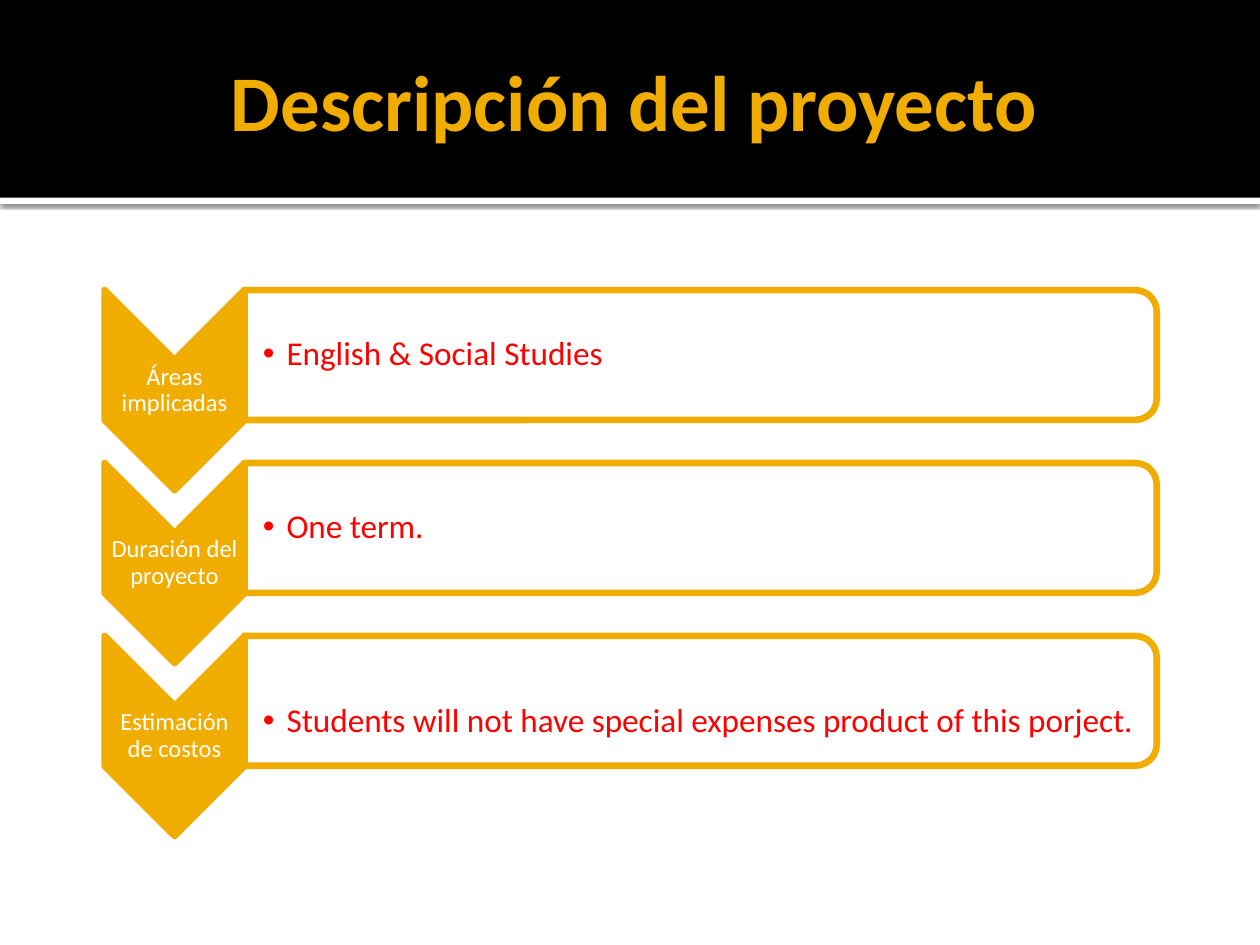
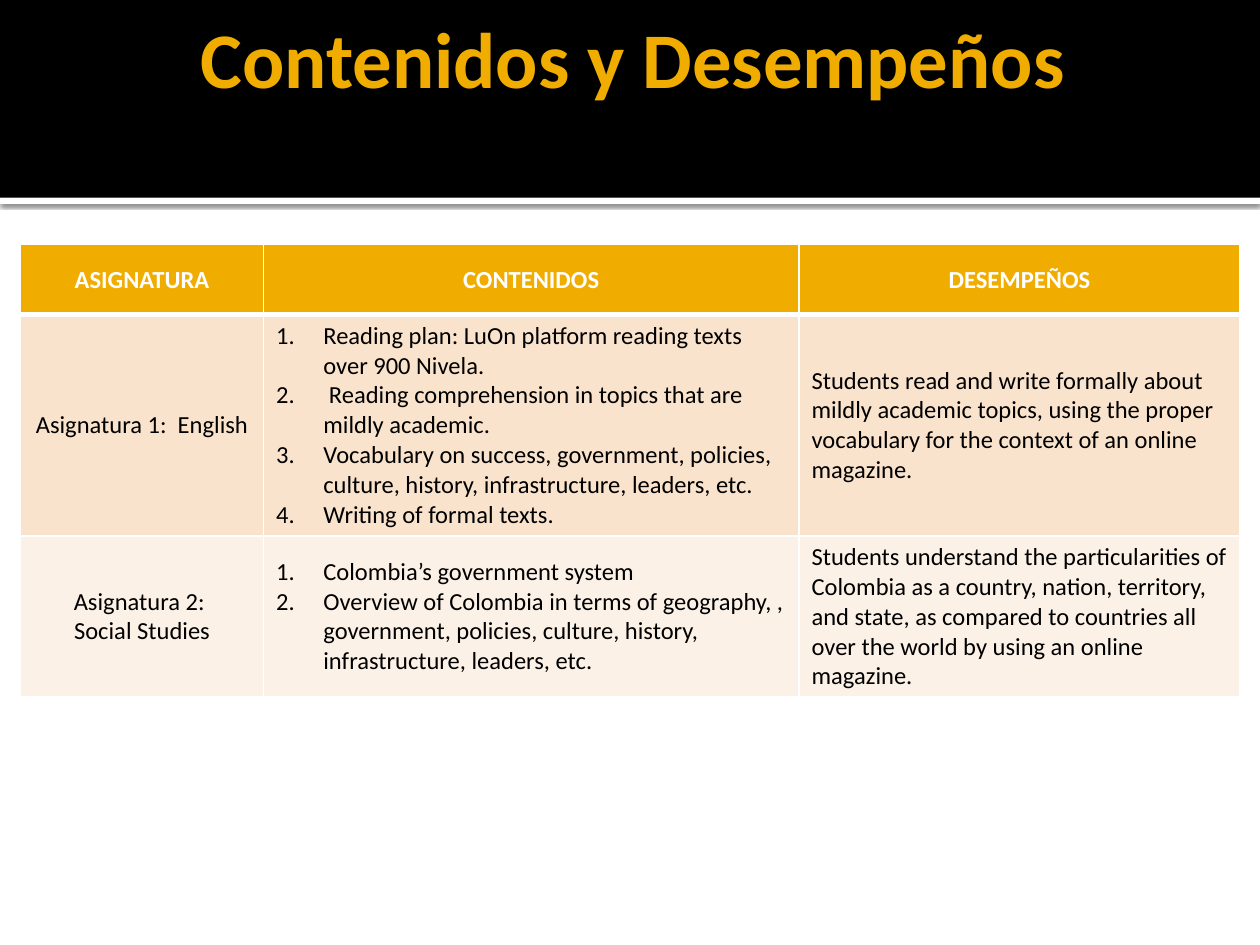
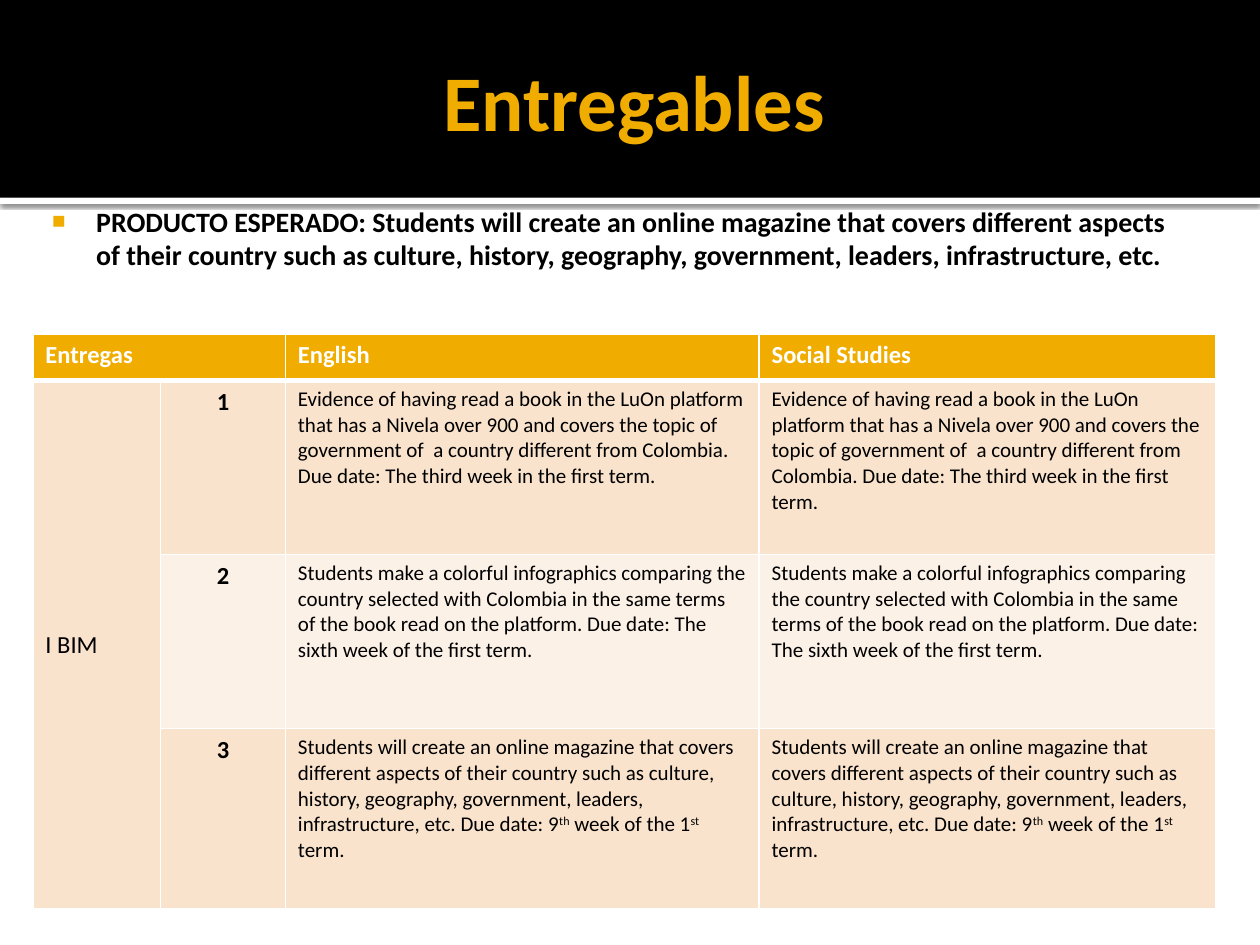
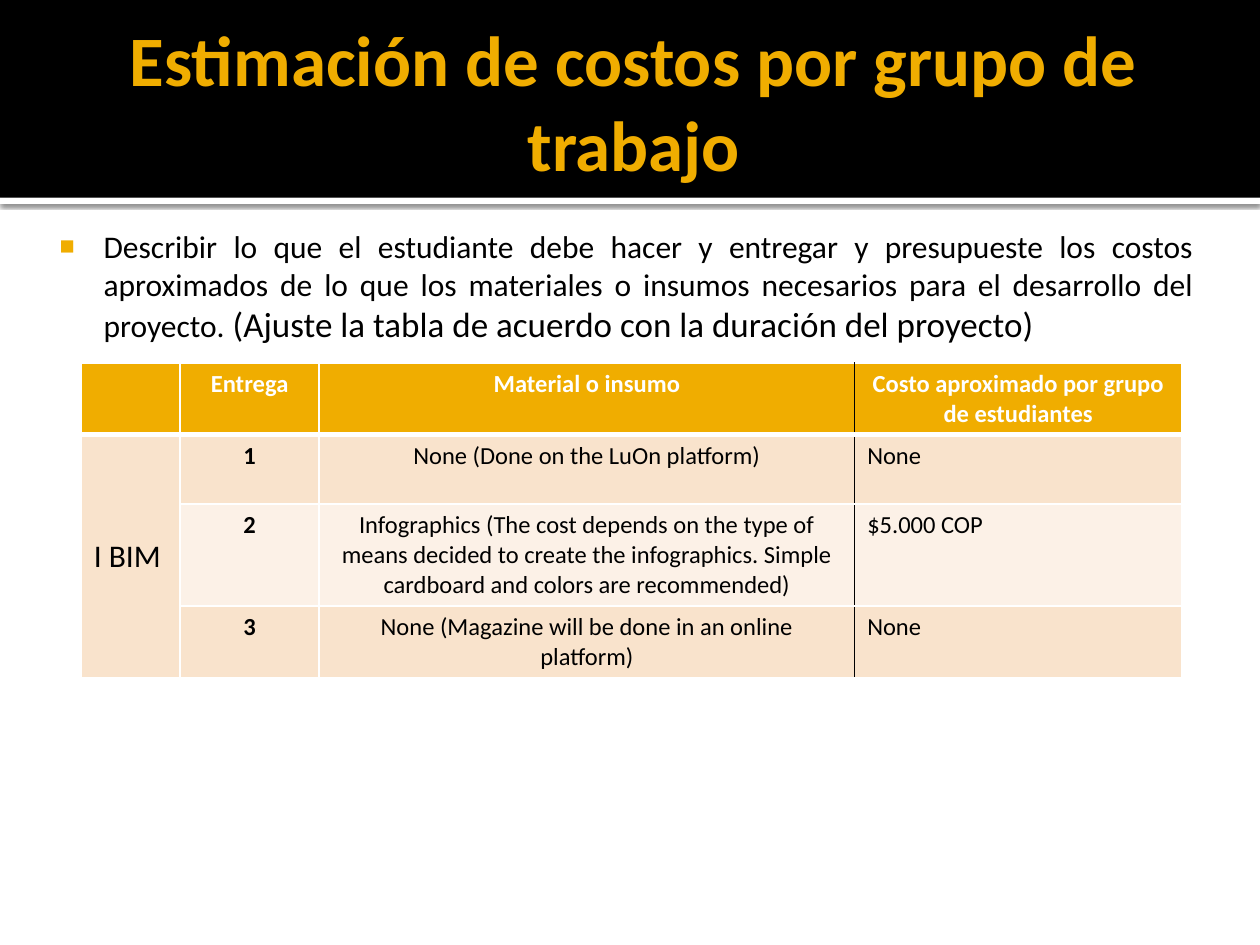
from dataclasses import dataclass, replace
from typing import Optional

from lxml.etree import SubElement
from pptx import Presentation
from pptx.dml.color import RGBColor
from pptx.enum.shapes import MSO_SHAPE as Preset
from pptx.enum.text import MSO_ANCHOR as Anchor, PP_ALIGN as Align
from pptx.oxml.ns import qn
from pptx.util import Pt


@dataclass(frozen=True)
class Theme:
    font: str = "Calibri"
    gold: str = "F0AD00"
    black: str = "000000"
    white: str = "FFFFFF"
    red: str = "FF0000"
    bands: tuple[str, str] = ("F9E3CC", "FCF1E7")
    title_size: float = 45
    long_title_size: float = 40.5
    topic_size: float = 19
    note_size: float = 20
    intro_size: float = 18
    product_size: float = 16
    table_size: float = 14
    detail_size: float = 12


THEME = Theme()


@dataclass(frozen=True)
class Box:
    left: float
    top: float
    width: float
    height: float


@dataclass(frozen=True)
class Bullet:
    mark: str
    margin: float
    hanging: float
    color: Optional[str] = None
    percent: int = 100


@dataclass(frozen=True)
class Style:
    size: float = THEME.table_size
    color: str = THEME.black
    bold: bool = False
    align: Align = Align.LEFT
    anchor: Anchor = Anchor.TOP
    spacing: Optional[float] = None
    bullet: Optional[Bullet] = None


@dataclass(frozen=True)
class Entry:
    text: str
    style: Style = Style()


@dataclass(frozen=True)
class Stage:
    label: str
    detail: str
    lead: float = 0.72


@dataclass(frozen=True)
class Grid:
    left: float
    top: float
    columns: tuple[float, ...]
    rows: tuple[float, ...]
    merges: tuple[tuple[int, int, int, int], ...] = ()
    dark_edge: Optional[int] = None


NUMBERED = Bullet("1.", 27, 27)
SQUARE = Bullet("■", 34.5, 25.2, THEME.gold, 80)
DOT = Bullet("•", 13.5, 13.5)

TITLE = Style(THEME.title_size, THEME.gold, True, Align.CENTER, Anchor.MIDDLE)
STAGE_LABEL = Style(color=THEME.white, align=Align.CENTER, anchor=Anchor.MIDDLE, spacing=0.9)
STAGE_DETAIL = Style(THEME.topic_size, THEME.red, anchor=Anchor.MIDDLE, spacing=0.9, bullet=DOT)
PRODUCT = Style(THEME.product_size, bold=True, bullet=SQUARE)
INTRO = Style(THEME.intro_size, align=Align.JUSTIFY, bullet=SQUARE)
HEADER = Style(color=THEME.white, bold=True)
CENTERED_HEADER = replace(HEADER, align=Align.CENTER)
MIDDLE = Style(anchor=Anchor.MIDDLE)
SUBJECT = replace(MIDDLE, align=Align.CENTER)
CONTENTS = replace(MIDDLE, bullet=NUMBERED)
NUMBER = Style(bold=True, align=Align.CENTER)
DETAIL = Style(THEME.detail_size)
SUPPLY = Style(align=Align.CENTER)

TITLE_BOX = Box(36.5, 8, 648, 98.5)
BODY_INSETS = (4.5, 7.2, 7.2, 3.6)


def rgb(color: str) -> RGBColor:
    return RGBColor.from_string(color)


def format_run(run, style: Style) -> None:
    font = run.font
    font.name, font.size, font.bold = THEME.font, Pt(style.size), style.bold
    font.color.rgb = rgb(style.color)


def set_bullet(paragraph, bullet: Bullet) -> None:
    properties = paragraph._p.get_or_add_pPr()
    properties.set("marL", str(Pt(bullet.margin)))
    properties.set("indent", str(-Pt(bullet.hanging)))
    if bullet.color:
        color = SubElement(properties, qn("a:buClr"))
        SubElement(color, qn("a:srgbClr"), val=bullet.color)
    SubElement(properties, qn("a:buSzPct"), val=str(bullet.percent * 1000))
    if bullet.mark == "1.":
        SubElement(properties, qn("a:buFont"), typeface="+mj-lt")
        SubElement(properties, qn("a:buAutoNum"), type="arabicPeriod")
    else:
        SubElement(properties, qn("a:buFont"), typeface="Arial")
        SubElement(properties, qn("a:buChar"), char=bullet.mark)


def write(frame, entry: Entry) -> None:
    style = entry.style
    for index, line in enumerate(entry.text.split("\n")):
        paragraph = frame.add_paragraph() if index else frame.paragraphs[0]
        paragraph.alignment = style.align
        if style.spacing:
            paragraph.line_spacing = style.spacing
        if style.bullet:
            set_bullet(paragraph, style.bullet)
        for position, piece in enumerate(line.split("^")):
            run = paragraph.add_run()
            run.text = piece
            format_run(run, style)
            if position % 2:
                run.font._element.set("baseline", "30000")


def add_text(slide, box: Box, entry: Entry, insets: tuple[float, float, float, float]):
    holder = slide.shapes.add_textbox(Pt(box.left), Pt(box.top), Pt(box.width), Pt(box.height))
    frame = holder.text_frame
    frame.word_wrap = True
    frame.vertical_anchor = entry.style.anchor
    frame.margin_left, frame.margin_top, frame.margin_right, frame.margin_bottom = map(Pt, insets)
    write(frame, entry)
    return frame


def add_shape(slide, preset: Preset, box: Box, fill: str, line: Optional[str] = None):
    shape = slide.shapes.add_shape(preset, Pt(box.left), Pt(box.top), Pt(box.width), Pt(box.height))
    shape.shadow.inherit = False
    shape.fill.solid()
    shape.fill.fore_color.rgb = rgb(fill)
    if line:
        shape.line.color.rgb = rgb(line)
        shape.line.width = Pt(3.78)
    else:
        shape.line.fill.background()
    return shape


def add_turned(slide, preset: Preset, box: Box, fill: str):
    shift = (box.width - box.height) / 2
    upright = Box(box.left + shift, box.top - shift, box.height, box.width)
    shape = add_shape(slide, preset, upright, fill, THEME.gold)
    shape.rotation = 90
    return shape


def set_alpha(color, percent: int) -> None:
    SubElement(color, qn("a:alpha"), val=str(percent * 1000))


def add_slide(deck, title: str, box: Box = TITLE_BOX, size: float = THEME.title_size):
    slide = deck.slides.add_slide(deck.slide_layouts[6])
    rule = add_shape(slide, Preset.RECTANGLE, Box(0, 113, 720, 3.6), THEME.white)
    shadow = SubElement(rule._element.spPr.find(qn("a:effectLst")), qn("a:outerShdw"),
                        blurRad=str(Pt(2.5)), dist=str(Pt(0.8)), dir="5400000",
                        algn="tl", rotWithShape="0")
    set_alpha(SubElement(shadow, qn("a:srgbClr"), val=THEME.black), 60)
    add_shape(slide, Preset.RECTANGLE, Box(0, 0, 720, 113), THEME.black)
    add_text(slide, box, Entry(title, replace(TITLE, size=size)), (7.2, 3.6, 3.6, 3.6))
    return slide


def add_stage(slide, stage: Stage, top: float) -> None:
    panel = add_turned(slide, Preset.ROUND_2_SAME_RECTANGLE, Box(139.5, top, 521.5, 74.2), THEME.white)
    set_alpha(panel.fill._xPr.find(qn("a:solidFill"))[0], 90)
    add_turned(slide, Preset.CHEVRON, Box(59.75, top, 80, 114.3), THEME.gold)
    add_text(slide, Box(59.75, top + 40, 80, 34.5), Entry(stage.label, STAGE_LABEL), (0.72,) * 4)
    add_text(slide, Box(139.5, top + 3.6, 518, 67), Entry(stage.detail, STAGE_DETAIL),
             (10.8, stage.lead, 0.72, 0.72))


def set_border(cell, side: str, color: str, width: float) -> None:
    line = SubElement(cell._tc.get_or_add_tcPr(), qn(f"a:{side}"), w=str(Pt(width)))
    fill = SubElement(line, qn("a:solidFill"))
    SubElement(fill, qn("a:srgbClr"), val=color)


def style_cell(cell, row: int, column: int, dark_edge: Optional[int]) -> None:
    left = THEME.black if column == dark_edge else THEME.white
    right = THEME.black if column + 1 == dark_edge else THEME.white
    set_border(cell, "lnL", left, 1)
    set_border(cell, "lnR", right, 1)
    set_border(cell, "lnT", THEME.white, 3 if row == 1 else 1)
    set_border(cell, "lnB", THEME.white, 3 if row == 0 else 1)
    cell.fill.solid()
    cell.fill.fore_color.rgb = rgb(THEME.bands[(row - 1) % 2] if row else THEME.gold)


def add_grid(slide, grid: Grid, entries: list[list[Optional[Entry]]]) -> None:
    table = slide.shapes.add_table(
        len(grid.rows), len(grid.columns), Pt(grid.left), Pt(grid.top),
        Pt(sum(grid.columns)), Pt(sum(grid.rows))).table
    table.horz_banding = False
    for column, width in zip(table.columns, grid.columns):
        column.width = Pt(width)
    for row, height in zip(table.rows, grid.rows):
        row.height = Pt(height)
    for top, left, bottom, right in grid.merges:
        table.cell(top, left).merge(table.cell(bottom, right))
    for row, line in enumerate(entries):
        for column, entry in enumerate(line):
            cell = table.cell(row, column)
            style_cell(cell, row, column, grid.dark_edge)
            if entry:
                cell.vertical_anchor = entry.style.anchor
                write(cell.text_frame, entry)


def build_description(deck) -> None:
    slide = add_slide(deck, "Descripción del proyecto")
    stages = [
        Stage("Áreas implicadas", "English & Social Studies"),
        Stage("Duración del proyecto", "One term."),
        Stage("Estimación de costos",
              "Students will not have special expenses product of this porject.", 24.5),
    ]
    for index, stage in enumerate(stages):
        add_stage(slide, stage, 165.8 + 98.8 * index)


def build_contents(deck) -> None:
    slide = add_slide(deck, "Contenidos y Desempeños", Box(36, 0, 648, 65.5))
    subjects = [
        ("Asignatura 1:  English",
         "Reading plan: LuOn platform reading texts over 900 Nivela.\n"
         " Reading comprehension in topics that are mildly academic.\n"
         "Vocabulary on success, government, policies, culture, history, "
         "infrastructure, leaders, etc.\n"
         "Writing of formal texts.",
         "Students read and write formally about mildly academic topics, using the proper "
         "vocabulary for the context of an online magazine."),
        ("Asignatura 2: \nSocial Studies",
         "Colombia’s government system\n"
         "Overview of Colombia in terms of geography, , government, policies, culture, "
         "history, infrastructure, leaders, etc.",
         "Students understand the particularities of Colombia as a country, nation, territory, "
         "and state, as compared to countries all over the world by using an online magazine."),
    ]
    header = replace(CENTERED_HEADER, anchor=Anchor.MIDDLE)
    entries = [[Entry(name, header) for name in ("ASIGNATURA", "CONTENIDOS", "DESEMPEÑOS")]]
    entries += [[Entry(text, style) for text, style in zip(subject, (SUBJECT, CONTENTS, MIDDLE))]
                for subject in subjects]
    add_grid(slide, Grid(11.8, 139.8, (138.8, 306, 252), (40, 126.5, 92)), entries)


def build_deliverables(deck) -> None:
    slide = add_slide(deck, "Entregables")
    product = ("PRODUCTO ESPERADO: Students will create an online magazine that covers different "
               "aspects of their country such as culture, history, geography, government, "
               "leaders, infrastructure, etc.")
    add_text(slide, Box(16, 109.5, 669, 381), Entry(product, PRODUCT), BODY_INSETS)
    deliverables = [
        "Evidence of having read a book in the LuOn platform that has a Nivela over 900 and "
        "covers the topic of government of  a country different from Colombia. "
        "Due date: The third week in the first term.",
        "Students make a colorful infographics comparing the country selected with Colombia in "
        "the same terms of the book read on the platform. "
        "Due date: The sixth week of the first term.",
        "Students will create an online magazine that covers different aspects of their country "
        "such as culture, history, geography, government, leaders, infrastructure, etc. "
        "Due date: 9^th^ week of the 1^st^ term.",
    ]
    entries = [[Entry("Entregas", HEADER), None,
                Entry("English", HEADER), Entry("Social Studies", HEADER)]]
    for number, text in enumerate(deliverables, 1):
        term = Entry("I BIM", MIDDLE) if number == 1 else None
        entries.append([term, Entry(str(number), NUMBER)] + [Entry(text, DETAIL)] * 2)
    grid = Grid(18.8, 190.8, (73, 71.3, 270.7, 260.8), (26.6, 99.5, 99.5, 103),
                ((0, 0, 0, 1), (1, 0, 3, 0)))
    add_grid(slide, grid, entries)


def build_costs(deck) -> None:
    slide = add_slide(deck, "Estimación de costos por grupo de trabajo",
                      size=THEME.long_title_size)
    intro = ("Describir lo que el estudiante debe hacer y entregar y presupueste los costos "
             "aproximados de lo que los materiales o insumos necesarios para el desarrollo "
             "del proyecto.")
    frame = add_text(slide, Box(20.2, 122.4, 669, 392.4), Entry(intro, INTRO), BODY_INSETS)
    note = frame.paragraphs[0].add_run()
    note.text = " (Ajuste la tabla de acuerdo con la duración del proyecto)"
    format_run(note, replace(INTRO, size=THEME.note_size))
    costs = [
        ("None (Done on the LuOn platform)", "None"),
        ("Infographics (The cost depends on the type of means decided to create the "
         "infographics. Simple cardboard and colors are recommended)", "$5.000 COP"),
        ("None (Magazine will be done in an online platform)", "None"),
    ]
    names = ("Entrega", "Material o insumo", "Costo aproximado por grupo de estudiantes")
    entries = [[None] + [Entry(name, CENTERED_HEADER) for name in names]]
    for number, (supply, cost) in enumerate(costs, 1):
        term = Entry("I BIM", replace(MIDDLE, size=THEME.intro_size)) if number == 1 else None
        entries.append([term, Entry(str(number), NUMBER), Entry(supply, SUPPLY), Entry(cost)])
    grid = Grid(46.4, 207.4, (56.6, 79.4, 306, 187), (41, 39.6, 58.4, 41),
                ((1, 0, 3, 0),), dark_edge=3)
    add_grid(slide, grid, entries)


def main() -> None:
    deck = Presentation()
    deck.slide_width, deck.slide_height = Pt(720), Pt(540)
    build_description(deck)
    build_contents(deck)
    build_deliverables(deck)
    build_costs(deck)
    deck.save("out.pptx")


if __name__ == "__main__":
    main()
